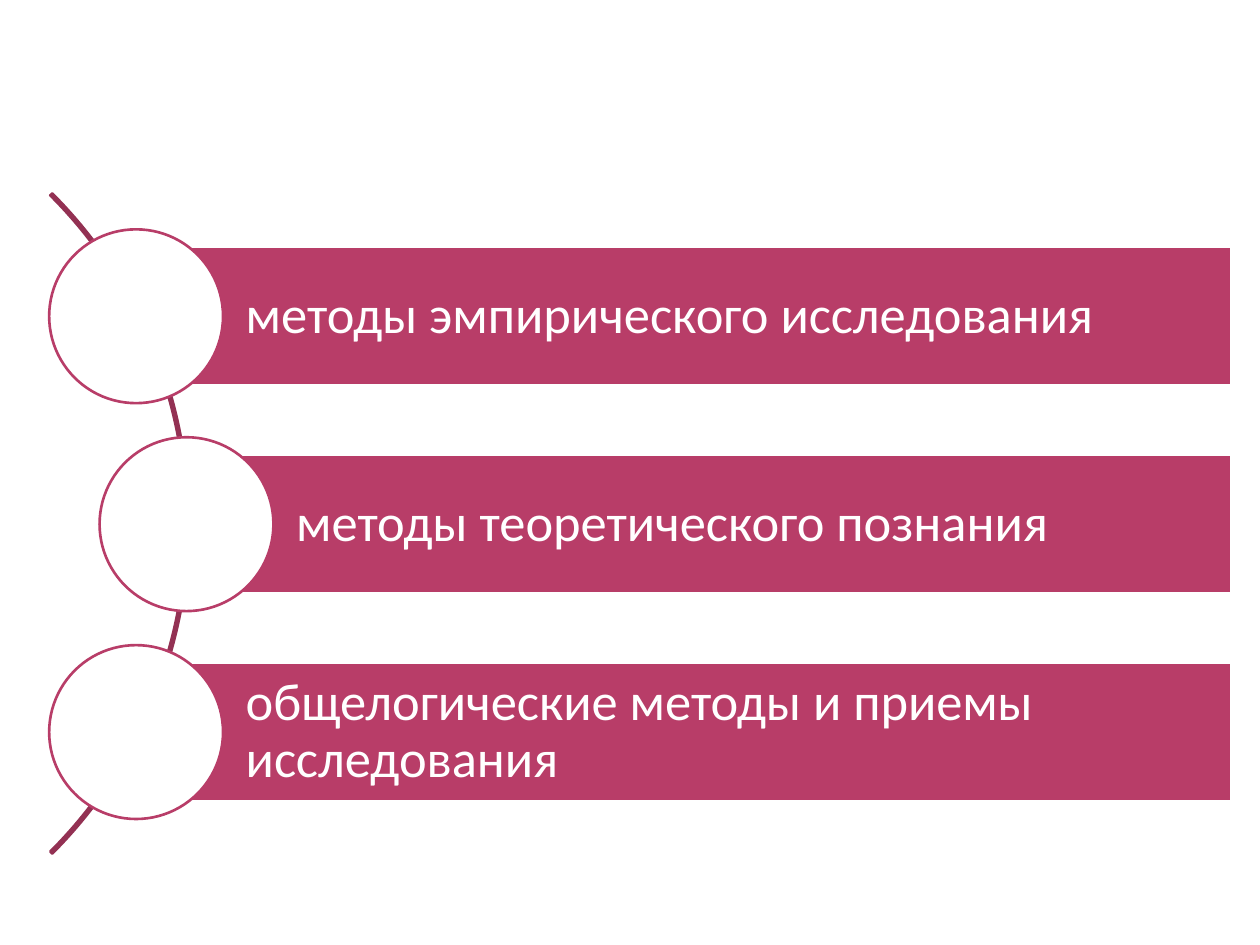
from pptx import Presentation
from pptx.dml.color import RGBColor
from pptx.enum.shapes import MSO_SHAPE
from pptx.enum.text import MSO_ANCHOR, PP_ALIGN
from pptx.util import Inches, Pt

WHITE = RGBColor(0xFF, 0xFF, 0xFF)
PINK = RGBColor(0xB8, 0x3D, 0x68)
DARK_PINK = RGBColor(0x93, 0x31, 0x53)

METHODS = [
    (1.08, "методы эмпирического исследования"),
    (1.48, "методы теоретического познания"),
    (1.08, "общелогические методы и приемы исследования"),
]
FIRST_CENTER = 2.51
STEP = 1.65
BAR_RIGHT = 9.77
BAR_HEIGHT = 1.1
CIRCLE = 1.38
ARC = 7.41


def write_text(tf, text, font="Calibri", size=30, color=WHITE, align=PP_ALIGN.LEFT, spacing=0.9):
    p = tf.paragraphs[0]
    p.alignment = align
    p.line_spacing = spacing
    r = p.add_run()
    r.text = text
    r.font.name = font
    r.font.size = Pt(size)
    r.font.color.rgb = color


class SlideBuilder:
    def __init__(self, slide, line_width=1.5):
        self.s = slide
        self.line_width = Pt(line_width)

    def shape(self, kind, left, top, width, height, line, fill=None):
        sp = self.s.shapes.add_shape(kind, Inches(left), Inches(top), Inches(width), Inches(height))
        sp.shadow.inherit = False
        if fill is None:
            sp.fill.background()
        else:
            sp.fill.solid()
            sp.fill.fore_color.rgb = fill
        sp.line.color.rgb = line
        sp.line.width = self.line_width
        return sp

    def arc(self, left, top, size):
        sp = self.shape(MSO_SHAPE.BLOCK_ARC, left, top, size, size, DARK_PINK)
        for i, value in enumerate((189, 27, 0.003)):
            sp.adjustments[i] = value

    def bar(self, left, center, text):
        sp = self.shape(MSO_SHAPE.RECTANGLE, left, center - BAR_HEIGHT / 2,
                        BAR_RIGHT - left, BAR_HEIGHT, WHITE, PINK)
        tf = sp.text_frame
        tf.word_wrap = True
        tf.vertical_anchor = MSO_ANCHOR.MIDDLE
        tf.margin_left = Inches(0.87)
        tf.margin_top = tf.margin_right = tf.margin_bottom = Inches(0.08)
        write_text(tf, text)

    def circle(self, x, y):
        self.shape(MSO_SHAPE.OVAL, x - CIRCLE / 2, y - CIRCLE / 2, CIRCLE, CIRCLE, PINK, WHITE)


def main():
    prs = Presentation()
    prs.slide_width = Inches(10)
    prs.slide_height = Inches(7.5)
    builder = SlideBuilder(prs.slides.add_slide(prs.slide_layouts[6]))
    builder.arc(-5.91, 0.45, ARC)
    for i, (left, text) in enumerate(METHODS):
        center = FIRST_CENTER + i * STEP
        builder.bar(left, center, text)
        builder.circle(left, center)
    prs.save("out.pptx")


if __name__ == "__main__":
    main()
